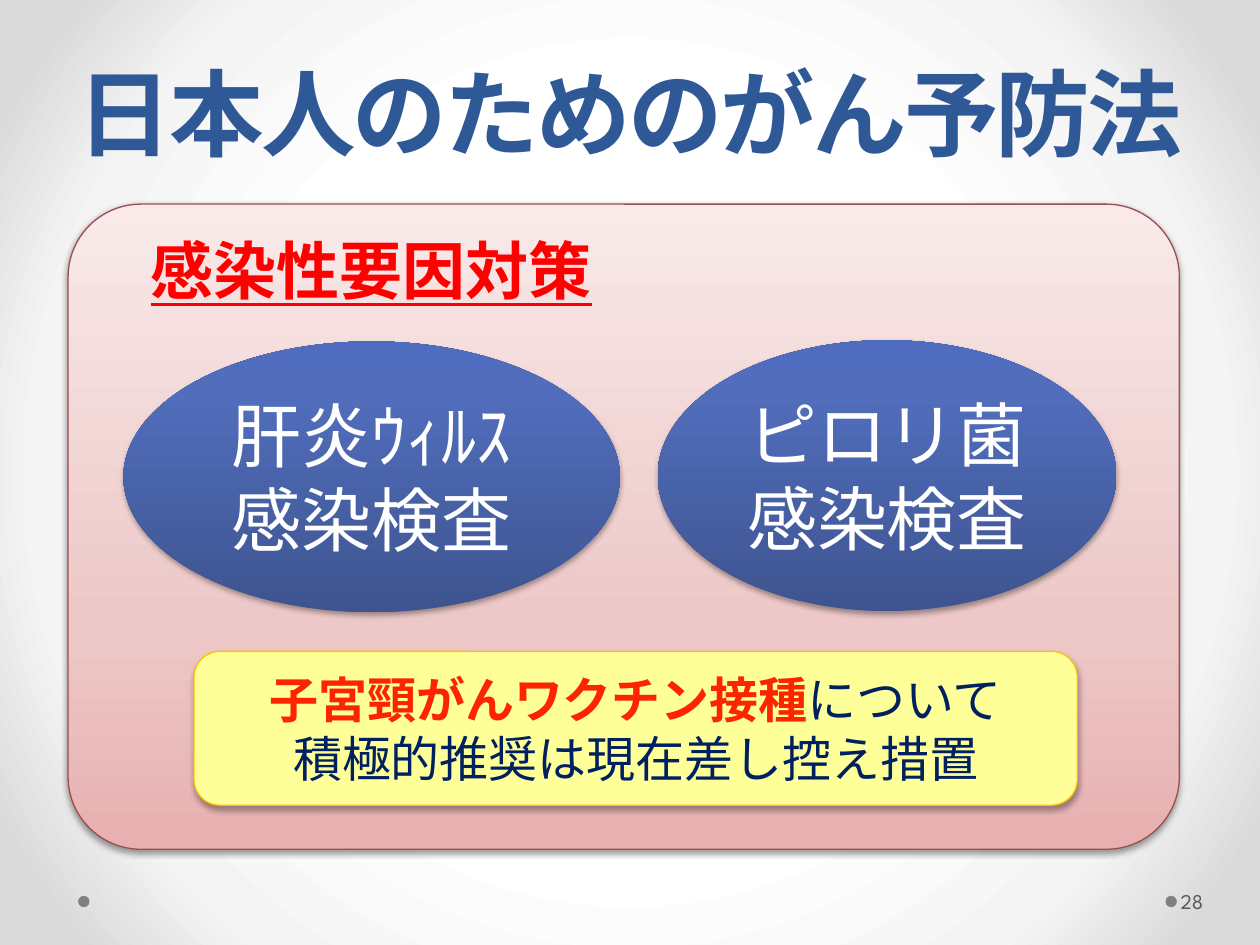
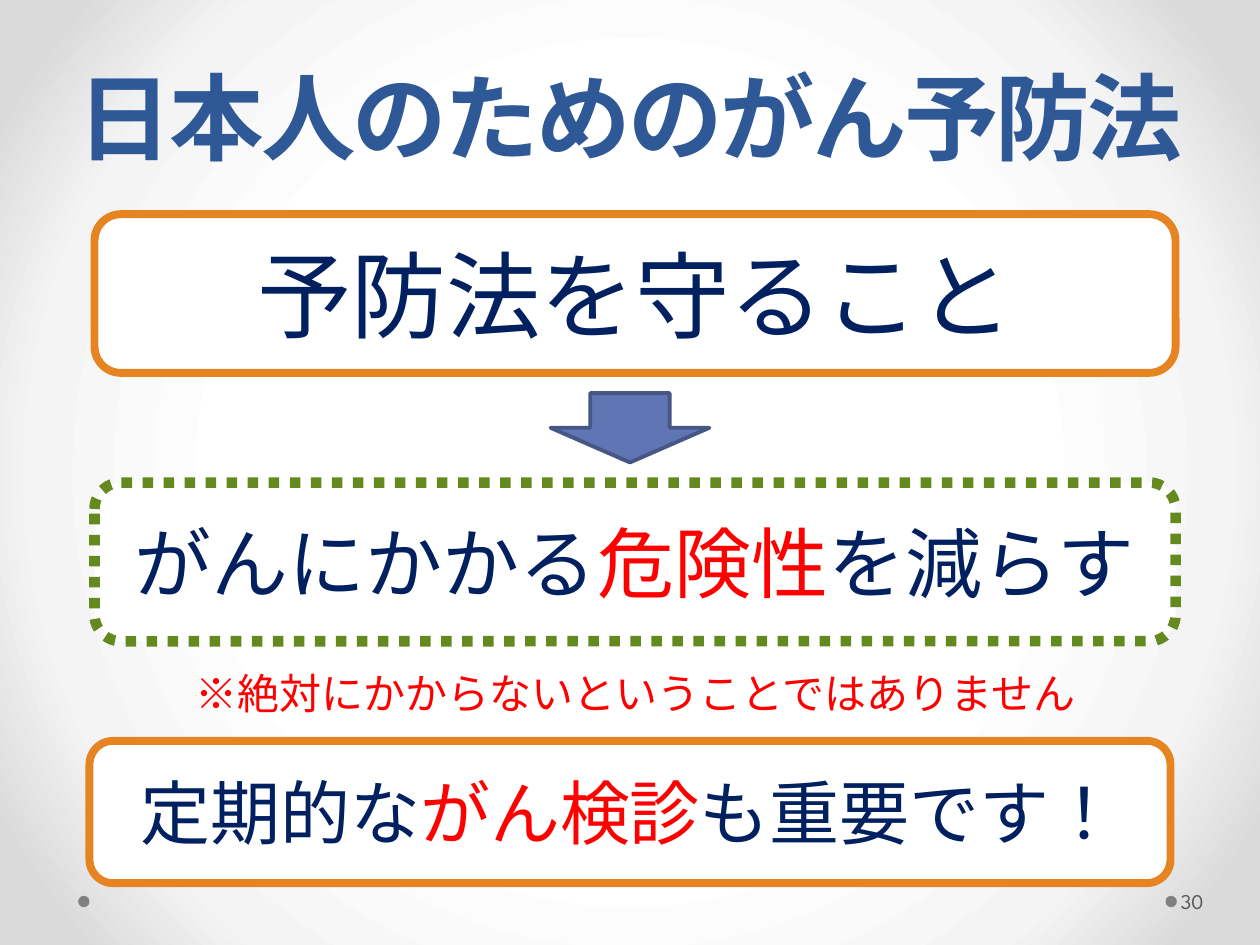
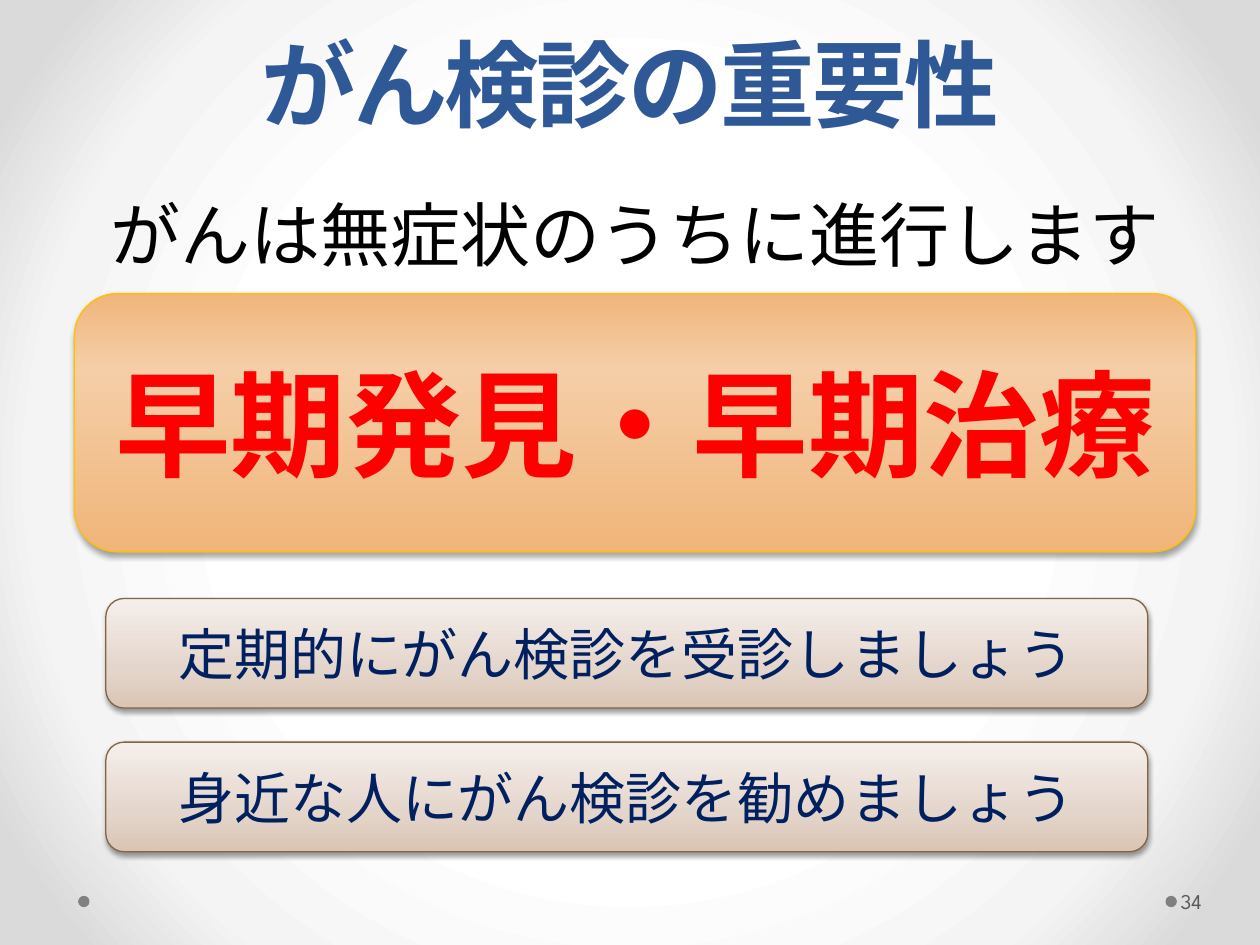
from pptx import Presentation
from pptx.dml.color import RGBColor
from pptx.enum.dml import MSO_LINE
from pptx.enum.lang import MSO_LANGUAGE_ID
from pptx.enum.shapes import MSO_SHAPE
from pptx.enum.text import MSO_ANCHOR, PP_ALIGN
from pptx.oxml import parse_xml
from pptx.oxml.ns import nsdecls, qn
from pptx.util import Inches, Pt

ROUNDED, ELLIPSE, DOWN_ARROW = (
    MSO_SHAPE.ROUNDED_RECTANGLE, MSO_SHAPE.OVAL, MSO_SHAPE.DOWN_ARROW)
CENTER, LEFT = PP_ALIGN.CENTER, PP_ALIGN.LEFT
TOP, MIDDLE = MSO_ANCHOR.TOP, MSO_ANCHOR.MIDDLE
DOTTED = MSO_LINE.ROUND_DOT
JAPANESE = MSO_LANGUAGE_ID.JAPANESE

SERIF, SANS, NUMBER_FONT = "Vollkorn", "Noto Sans CJK JP", "League Spartan"

BLACK = RGBColor(0x00, 0x00, 0x00)
WHITE = RGBColor(0xFF, 0xFF, 0xFF)
RED = RGBColor(0xFF, 0x00, 0x00)
VACCINE_RED = RGBColor(0xFD, 0x25, 0x01)
NAVY = RGBColor(0x00, 0x20, 0x60)
TITLE_BLUE = RGBColor(0x2F, 0x58, 0x97)
ARROW_BLUE = RGBColor(0x60, 0x76, 0xB4)
ARROW_EDGE = RGBColor(0x47, 0x57, 0x85)
GRAY = RGBColor(0x80, 0x80, 0x80)
NUMBER_GRAY = RGBColor(0x59, 0x59, 0x59)
PANEL_EDGE = RGBColor(0x9A, 0x4E, 0x4E)
YELLOW = RGBColor(0xFF, 0xFF, 0x99)
GOLD = RGBColor(0xFF, 0xC0, 0x00)
ORANGE = RGBColor(0xE6, 0x84, 0x22)
GREEN = RGBColor(0x63, 0x89, 0x1F)
BROWN = RGBColor(0x83, 0x64, 0x45)

UPWARD = '<a:lin ang="16200000" scaled="0"/>'
RADIAL = ('<a:path path="circle"><a:fillToRect l="50000" t="50000" '
          'r="50000" b="50000"/></a:path>')
BACKDROP = [(50, WHITE), (76, RGBColor(0xF4, 0xF4, 0xF4)),
            (92, RGBColor(0xDA, 0xDA, 0xDA))]
PINK_FADE = [(0, RGBColor(0xE8, 0xB0, 0xB0)), (35, RGBColor(0xED, 0xC8, 0xC8)),
             (100, RGBColor(0xF9, 0xE9, 0xE9))]
BLUE_FADE = [(0, RGBColor(0x3E, 0x54, 0x90)), (80, RGBColor(0x51, 0x6D, 0xBB)),
             (100, RGBColor(0x4F, 0x6C, 0xBE))]
ORANGE_FADE = [(0, RGBColor(0xF0, 0xB5, 0x7A)), (71, RGBColor(0xF5, 0xCE, 0xA7)),
               (100, RGBColor(0xF0, 0xB5, 0x7A))]
BEIGE_FADE = [(0, RGBColor(0xDA, 0xC4, 0xB4)), (35, RGBColor(0xE4, 0xD5, 0xCB)),
              (100, RGBColor(0xF5, 0xEF, 0xEB))]

SOFT_SHADOW = (38, 3.1, 1.6)
GLOSS_SHADOW = (35, 3.1, 1.8)
DEEP_SHADOW = (32, 3.5, 2.2)


def gradient_xml(stops, direction):
    stop_list = "".join(
        f'<a:gs pos="{position * 1000}"><a:srgbClr val="{color}"/></a:gs>'
        for position, color in stops)
    return (f'<a:gradFill {nsdecls("a")} rotWithShape="1">'
            f"<a:gsLst>{stop_list}</a:gsLst>{direction}</a:gradFill>")


def add_shadow(shape, opacity, blur, distance):
    effects = shape.element.spPr.find(qn("a:effectLst"))
    effects.append(parse_xml(
        f'<a:outerShdw {nsdecls("a")} blurRad="{Pt(blur)}" dist="{Pt(distance)}" '
        f'dir="5400000" rotWithShape="0"><a:srgbClr val="{BLACK}">'
        f'<a:alpha val="{opacity * 1000}"/></a:srgbClr></a:outerShdw>'))


def write_text(shape, paragraphs, size, color, font=SERIF, align=CENTER,
               anchor=MIDDLE, **formats):
    frame = shape.text_frame
    frame.word_wrap = True
    frame.vertical_anchor = anchor
    for index, runs in enumerate(paragraphs):
        paragraph = frame.paragraphs[0] if index == 0 else frame.add_paragraph()
        paragraph.alignment = align
        for text, changes in runs:
            run = paragraph.add_run()
            run.text = text
            run.font.color.rgb = changes.get("color", color)
            values = {"name": font, "size": Pt(size), "language_id": JAPANESE,
                      **formats, "bold": changes.get("bold", formats.get("bold"))}
            for name, value in values.items():
                setattr(run.font, name, value)
            run.font._element.append(
                parse_xml(f'<a:ea {nsdecls("a")} typeface="{font}"/>'))
    return frame


def plain(*lines):
    return [[(line, {})] for line in lines]


def add_box(slide, kind, box, fill, line=None, width=0.75, dash=None, shadow=None):
    shape = slide.shapes.add_shape(kind, *map(Inches, box))
    shape.shadow.inherit = False
    if isinstance(fill, list):
        shape.fill.gradient()
        properties = shape.element.spPr
        properties.replace(properties.find(qn("a:gradFill")),
                           parse_xml(gradient_xml(fill, UPWARD)))
    else:
        shape.fill.solid()
        shape.fill.fore_color.rgb = fill
    if line is None:
        shape.line.fill.background()
    else:
        shape.line.color.rgb = line
        shape.line.width = Pt(width)
        if dash is not None:
            shape.line.dash_style = dash
    if shadow:
        add_shadow(shape, *shadow)
    return shape


def add_label(slide, box, text, size, color, **formats):
    label = slide.shapes.add_textbox(*map(Inches, box))
    return write_text(label, plain(text), size, color, **formats)


def add_title(slide, text, box):
    paragraph = add_label(slide, box, text, 54, TITLE_BLUE, bold=True).paragraphs[0]
    paragraph.line_spacing = Pt(58)
    paragraph.runs[0].font._element.set("spc", "-150")


def add_base(presentation, title, title_box, number):
    slide = presentation.slides.add_slide(presentation.slide_layouts[6])
    slide.element.cSld.insert(0, parse_xml(
        f'<p:bg {nsdecls("p", "a")}><p:bgPr>{gradient_xml(BACKDROP, RADIAL)}'
        "<a:effectLst/></p:bgPr></p:bg>"))
    for left in (9.25, 0.62):
        add_box(slide, ELLIPSE, (left, 7.11, 0.09, 0.09), GRAY)
    add_title(slide, title, title_box)
    frame = add_label(slide, (9.34, 6.95, 0.61, 0.4), number, 12, NUMBER_GRAY,
                      font=NUMBER_FONT, align=LEFT)
    frame.margin_left = Inches(0.03)
    frame.margin_right = Inches(0.05)
    return slide


def add_infection_panel(slide, left, top, width, height):
    panel = add_box(slide, ROUNDED, (left, top, width, height), PINK_FADE,
                    PANEL_EDGE, shadow=SOFT_SHADOW)
    panel.adjustments[0] = 0.113
    heading = write_text(panel, plain("感染性要因対策"), 36, RED, SANS, LEFT, TOP,
                         bold=True, underline=True).paragraphs[0]
    heading._p.get_or_add_pPr().set("marL", str(Pt(28)))

    tests = [((0.44, 1.09, 3.94), ["肝炎ｳｨﾙｽ感染検査"]),
             ((4.68, 1.08, 3.64), ["ピロリ菌", "感染検査"])]
    for (offset_x, offset_y, test_width), lines in tests:
        test = add_box(slide, ELLIPSE,
                       (left + offset_x, top + offset_y, test_width, 2.15),
                       BLUE_FADE, shadow=GLOSS_SHADOW)
        write_text(test, plain(*lines), 40, WHITE)

    vaccine = add_box(slide, ROUNDED, (left + 1, top + 3.55, 7.01, 1.22),
                      YELLOW, GOLD, shadow=DEEP_SHADOW)
    write_text(vaccine, [
        [("子宮頸がんワクチン接種", {"color": VACCINE_RED, "bold": True}),
         ("について", {})],
        [("積極的推奨は現在差し控え措置", {})],
    ], 28, NAVY)


def add_prevention_flow(slide, left, top, width):
    red = {"color": RED}
    steps = [
        (0, 0, 1.26, ORANGE, 4.5, None, 54, [("予防法を守ること", {})]),
        (0, 2.13, 1.26, GREEN, 6, DOTTED, 44,
         [("がんにかかる", {}), ("危険性", red), ("を減らす", {})]),
        (-0.04, 4.18, 1.13, ORANGE, 4.5, None, 40,
         [("定期的な", {}), ("がん検診", red), ("も重要です！", {})]),
    ]
    for offset_x, offset_y, height, edge, weight, dash, size, runs in steps:
        step = add_box(slide, ROUNDED, (left + offset_x, top + offset_y, width, height),
                       WHITE, edge, weight, dash)
        write_text(step, [runs], size, NAVY, SANS)
    add_box(slide, DOWN_ARROW, (left + 3.62, top + 1.42, 1.26, 0.55),
            ARROW_BLUE, ARROW_EDGE, 2.25)
    add_label(slide, (left + 0.24, top + 3.55, 8.11, 0.5),
              "※絶対にかからないということではありません", 24, RED, anchor=TOP)


def add_screening_message(slide, left, top, width):
    add_label(slide, (left + 0.08, top, 8.74, 0.77),
              "がんは無症状のうちに進行します", 40, BLACK, anchor=TOP)
    banner = add_box(slide, ROUNDED, (left, top + 0.86, width, 2.05), ORANGE_FADE,
                     GOLD, shadow=GLOSS_SHADOW)
    write_text(banner, plain("早期発見・早期治療"), 66, RED, bold=True)
    advice = ["定期的にがん検診を受診しましょう", "身近な人にがん検診を勧めましょう"]
    for index, text in enumerate(advice):
        bar = add_box(slide, ROUNDED,
                      (left + 0.25, top + 3.28 + 1.14 * index, 8.27, 0.87),
                      BEIGE_FADE, BROWN, shadow=SOFT_SHADOW)
        write_text(bar, plain(text), 32, NAVY)


def main():
    presentation = Presentation()
    presentation.slide_width = Inches(10)
    presentation.slide_height = Inches(7.5)
    prevention = "日本人のためのがん予防法"

    slide = add_base(presentation, prevention, (0.5, 0.47, 9, 0.92), "28")
    add_infection_panel(slide, 0.54, 1.62, 8.82, 5.12)
    slide = add_base(presentation, prevention, (0.5, 0.39, 9, 1.15), "30")
    add_prevention_flow(slide, 0.75, 1.7, 8.58)
    slide = add_base(presentation, "がん検診の重要性", (0.5, 0.24, 9, 0.92), "34")
    add_screening_message(slide, 0.59, 1.47, 8.9)

    presentation.save("out.pptx")


if __name__ == "__main__":
    main()
